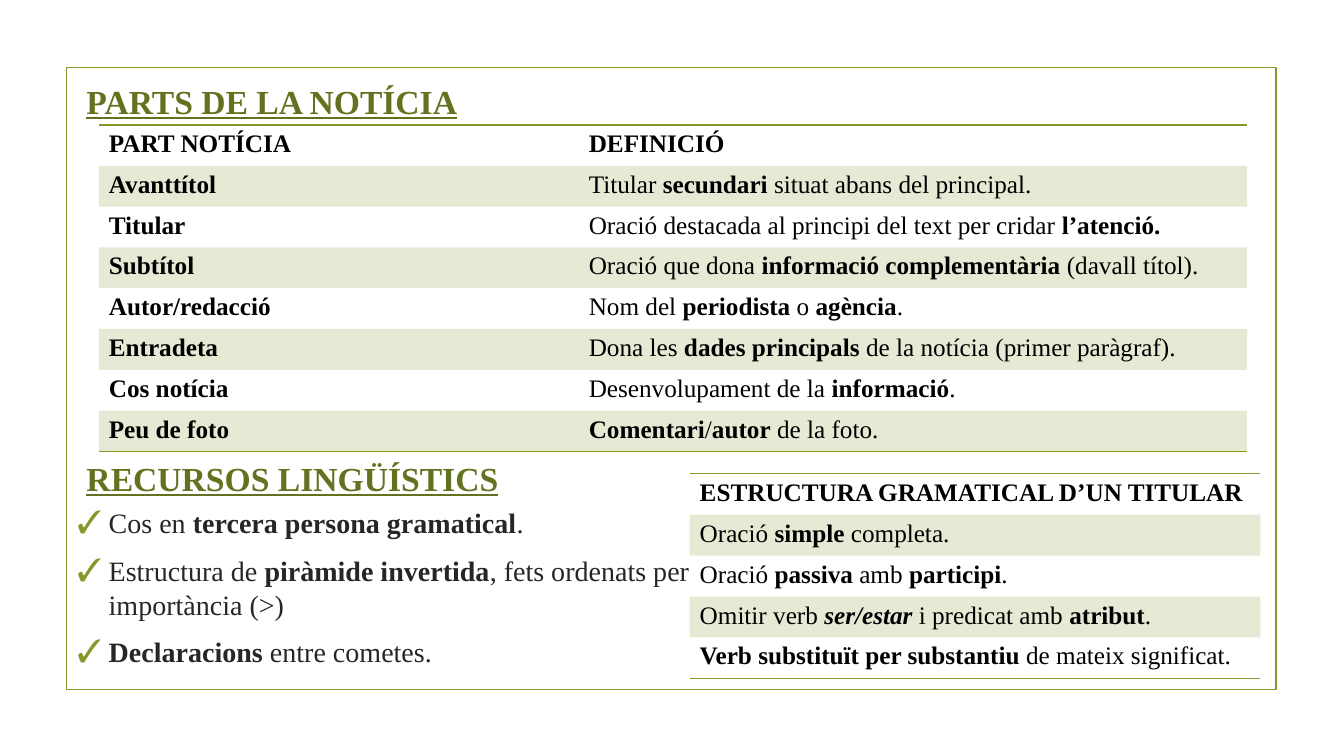
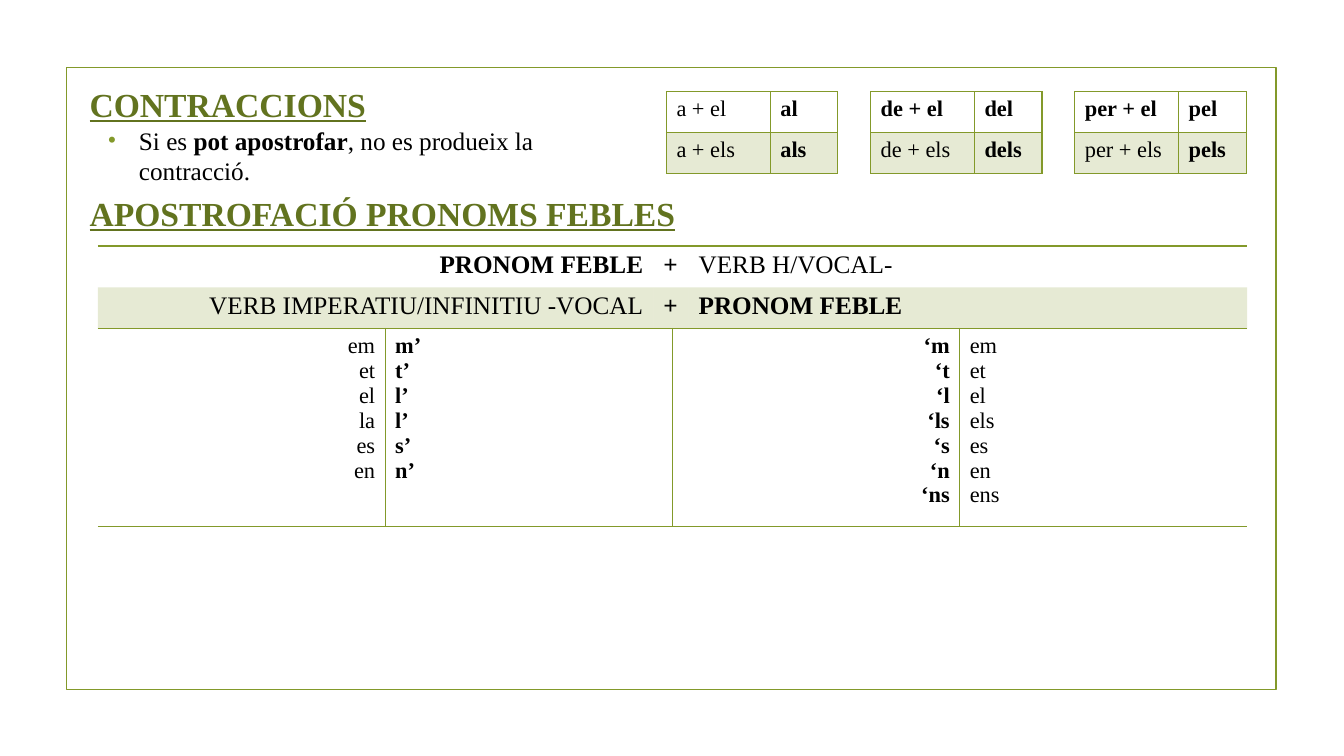
from dataclasses import dataclass
from typing import NamedTuple, Optional

from lxml.etree import SubElement as Sub
from pptx import Presentation
from pptx.dml.color import RGBColor as RGB
from pptx.enum.shapes import MSO_SHAPE as Shape
from pptx.enum.text import PP_ALIGN as Align
from pptx.oxml.ns import qn
from pptx.util import Inches, Pt


@dataclass(frozen=True)
class Theme:
    font: str = "Times New Roman"
    green: str = "83992A"
    dark: str = "62731F"
    gray: str = "262626"
    black: str = "000000"
    tint: int = 20
    title: int = 24
    list: int = 20
    body: int = 18
    small: int = 16
    plain: str = "{2D5ABB26-0587-4C30-8999-92F81FD0307C}"


class Box(NamedTuple):
    x: float
    y: float
    w: float
    h: float

    def size(self) -> list:
        return [Inches(v) for v in self]


class Row(NamedTuple):
    """Cells (None widens the cell before) and sides: L, R, T, B or I for inner."""
    cells: list
    sides: str = ""


class Grid(NamedTuple):
    box: Box
    cols: list
    rows: list
    size: int
    high: Optional[list] = None


T = Theme()


# Text: *bold*, *_bold italic*, a leading > aligns right, each line a paragraph
def write(frame, text: str, *, size: int, color: str = T.black, line: bool = False,
          mark: str = "", grow: int = 100, before: int = 0, after: int = 0) -> None:
    frame.word_wrap = True
    for i, part in enumerate(text.split("\n")):
        para = frame.paragraphs[0] if i == 0 else frame.add_paragraph()
        if mark:
            bullet(para, mark, grow)
        para.alignment = Align.RIGHT if part.startswith(">") else Align.LEFT
        para.space_before = Pt(before if i else 0)
        para.space_after = Pt(after)
        for j, bit in enumerate(part.removeprefix(">").split("*")):
            if not bit:
                continue
            run = para.add_run()
            run.text = bit.removeprefix("_")
            font = run.font
            font.name, font.size = T.font, Pt(size)
            font.bold, font.italic = j % 2 == 1, bit.startswith("_")
            font.underline = line
            font.color.rgb = RGB.from_string(color)


def bullet(para, mark: str, grow: int) -> None:
    props = para._p.get_or_add_pPr()
    props.set("marL", str(Inches(0.31)))
    props.set("indent", str(-Inches(0.31)))
    Sub(Sub(props, qn("a:buClr")), qn("a:srgbClr"), val=T.green)
    Sub(props, qn("a:buSzPct"), val=str(grow * 1000))
    Sub(props, qn("a:buFont"), typeface=T.font)
    Sub(props, qn("a:buChar"), char=mark)


def label(slide, box: Box, text: str, **form) -> None:
    write(slide.shapes.add_textbox(*box.size()).text_frame, text, **form)


def title(slide, x: float, y: float, text: str) -> None:
    label(slide, Box(x, y, 6.2, 0.5), f"*{text}*", size=T.title, color=T.dark, line=True)


# Tables: odd rows are tinted
def paint(cell, sides: str, tint: bool) -> None:
    props = cell._tc.get_or_add_tcPr()
    for side in "LRTB":
        edge = Sub(props, qn(f"a:ln{side}"), w=str(Pt(1)))
        if side in sides:
            Sub(Sub(edge, qn("a:solidFill")), qn("a:srgbClr"), val=T.green)
        else:
            Sub(edge, qn("a:noFill"))
    if tint:
        cell.fill.solid()
        cell.fill.fore_color.rgb = RGB.from_string(T.green)
        color = props.find(qn("a:solidFill")).find(qn("a:srgbClr"))
        Sub(color, qn("a:alpha"), val=str(T.tint * 1000))
    else:
        cell.fill.background()


def draw(slide, grid: Grid) -> None:
    last = len(grid.cols) - 1
    table = slide.shapes.add_table(len(grid.rows), last + 1, *grid.box.size()).table
    table._tbl.tblPr.find(qn("a:tableStyleId")).text = T.plain
    table.first_row = table.horz_banding = False
    for col, wide in zip(table.columns, grid.cols):
        col.width = Inches(wide)
    for row, high in zip(table.rows, grid.high or []):
        row.height = Inches(high)
    for r, row in enumerate(grid.rows):
        inner = "I" in row.sides
        start = 0
        for c, text in enumerate(row.cells):
            cell = table.cell(r, c)
            if text is not None:
                start = c
                write(cell.text_frame, text, size=grid.size)
            else:
                table.cell(r, start).merge(cell)
            ends = c == last or row.cells[c + 1] is not None
            sides = row.sides
            sides += "L" if inner and c == start > 0 else ""
            sides += "R" if inner and ends and c < last else ""
            paint(cell, sides, r % 2 == 1)


def ruled(lines: list) -> list:
    """Rows with rules around the header and under the last row."""
    return [Row(cells, "TB" if i == 0 else "B" if i == len(lines) - 1 else "")
            for i, cells in enumerate(lines)]


def stack(words: str, lead: str = "", mark: str = "") -> str:
    return "\n".join(f"{lead}{mark}{word}{mark}" for word in words.split())


# Shared frame
def page(deck):
    slide = deck.slides.add_slide(deck.slide_layouts[6])
    frame = slide.shapes.add_shape(Shape.RECTANGLE, *Box(0.66, 0.67, 12, 6.17).size())
    frame.shadow.inherit = False
    frame.fill.background()
    frame.line.color.rgb = RGB.from_string(T.green)
    frame.line.width = Pt(1.25)
    return slide


PARTS = [
    ["*PART NOTÍCIA*", "*DEFINICIÓ*"],
    ["*Avanttítol*", "Titular *secundari* situat abans del principal."],
    ["*Titular*", "Oració destacada al principi del text per cridar *l’atenció.*"],
    ["*Subtítol*", "Oració que dona *informació complementària* (davall títol)."],
    ["*Autor/redacció*", "Nom del *periodista* o *agència*."],
    ["*Entradeta*", "Dona les *dades principals* de la notícia (primer paràgraf)."],
    ["*Cos notícia*", "Desenvolupament de la *informació*."],
    ["*Peu de foto*", "*Comentari*/*autor* de la foto."],
]
HEADS = [
    ["*ESTRUCTURA GRAMATICAL D’UN TITULAR*"],
    ["Oració *simple* completa."],
    ["Oració *passiva* amb *participi*."],
    ["Omitir verb *_ser/estar *i predicat amb *atribut*."],
    ["*Verb substituït per substantiu *de mateix significat."],
]
TIPS = """Cos en *tercera persona gramatical*.
Estructura de *piràmide invertida*, fets ordenats per importància (>)
*Declaracions* entre cometes."""
JOINS = [
    [["a + el", "*al*"], ["a + els", "*als*"]],
    [["*de + el*", "*del*"], ["de + els", "*dels*"]],
    [["*per + el*", "*pel*"], ["per + els", "*pels*"]],
]


def news(deck) -> None:
    slide = page(deck)
    title(slide, 0.76, 0.75, "PARTS DE LA NOTÍCIA")
    draw(slide, Grid(Box(0.98, 1.24, 11.38, 3.24), [4.76, 6.63], ruled(PARTS), T.body))
    title(slide, 0.76, 4.49, "RECURSOS LINGÜÍSTICS")
    label(slide, Box(0.67, 4.97, 6.47, 1.76), TIPS, size=T.list, color=T.gray,
          mark="✓", grow=115, before=4, after=6)
    draw(slide, Grid(Box(6.84, 4.7, 5.66, 2.03), [5.66], ruled(HEADS), T.body))


def weak(deck) -> None:
    slide = page(deck)
    # Contractions
    title(slide, 0.79, 0.78, "CONTRACCIONS")
    label(slide, Box(0.97, 1.19, 5.45, 0.69),
          "Si es *pot apostrofar*, no es produeix la contracció.", size=T.body, mark="•")
    first, end = 6.61, 10.66
    step = (end - first) / (len(JOINS) - 1)
    for i, lines in enumerate(JOINS):
        box = Box(first + i * step, 0.91, 1.7, 0.81)
        draw(slide, Grid(box, [1.03, 0.67], [Row(c, "LRTB") for c in lines], T.small))
    # Weak pronouns: 18 pt heads over 16 pt forms
    title(slide, 0.79, 1.86, "APOSTROFACIÓ PRONOMS FEBLES")
    cols = [2.85, 2.66, 0.19, 0.16, 2.69, 2.85]
    rows = [
        Row([">*PRONOM FEBLE*", None, "*+*", None, "VERB H/VOCAL-", None], "T"),
        Row([">VERB IMPERATIU/INFINITIU -VOCAL", None, "*+*", None,
             "*PRONOM FEBLE*", None], "B"),
        Row([stack("em et el la es en", ">"), stack("m’ t’ l’ l’ s’ n’", mark="*"), None,
             stack("‘m ‘t ‘l ‘ls ‘s ‘n ‘ns", ">", "*"), None,
             stack("em et el els es en ens")], "TBI"),
    ]
    box = Box(0.97, 2.44, sum(cols), 2.78)
    draw(slide, Grid(box, cols, rows, T.body, [0.41, 0.41, 1.96]))
    table = slide.shapes[-1].table
    for cell in table.rows[2].cells:
        for para in cell.text_frame.paragraphs:
            for run in para.runs:
                run.font.size = Pt(T.small)


def main() -> None:
    deck = Presentation()
    deck.slide_width, deck.slide_height = Inches(13.33), Inches(7.5)
    news(deck)
    weak(deck)
    deck.save("out.pptx")


if __name__ == "__main__":
    main()
